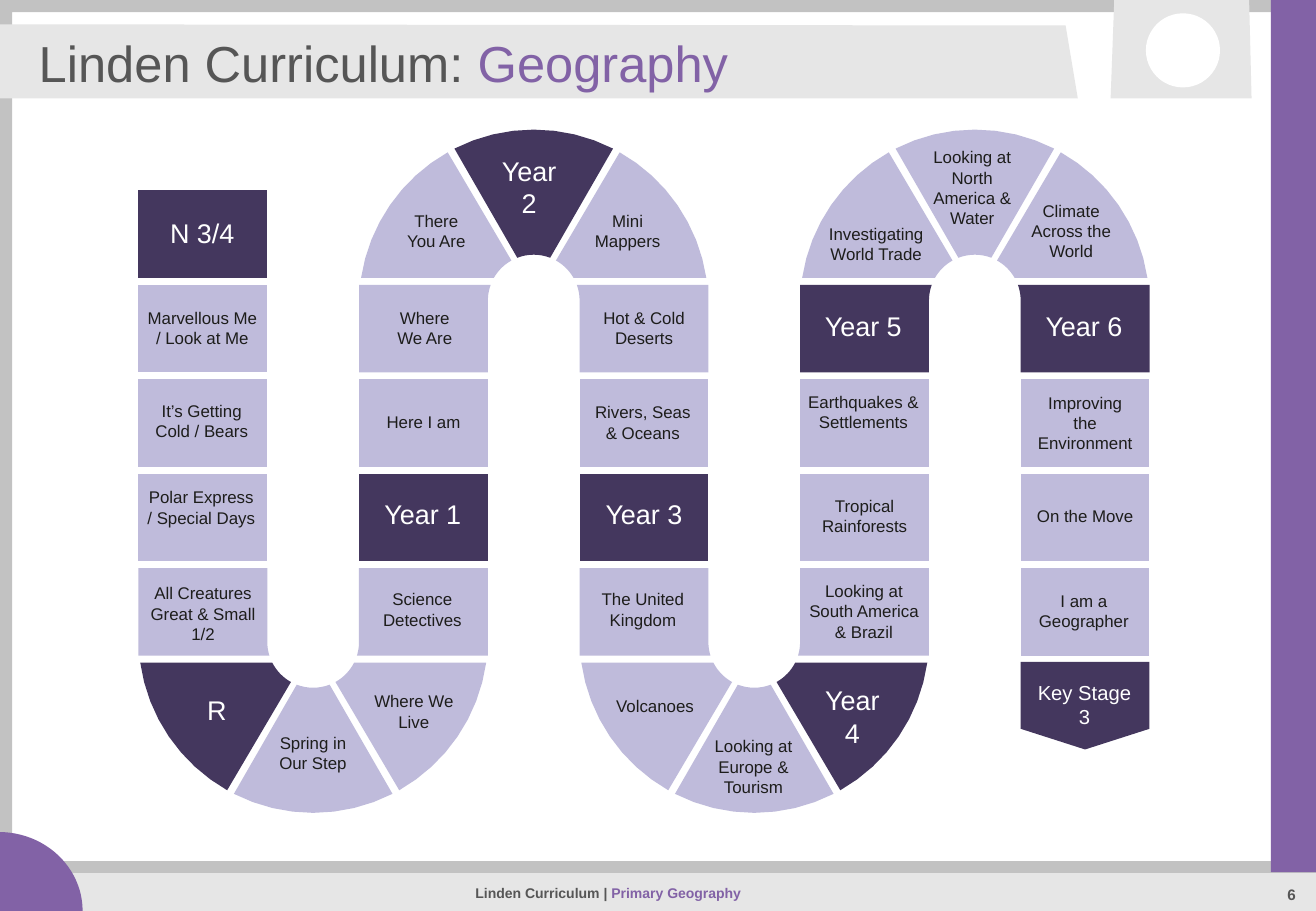
from math import asin, cos, degrees, radians, sin

from lxml import etree
from pptx import Presentation
from pptx.dml.color import RGBColor
from pptx.enum.shapes import MSO_CONNECTOR, MSO_SHAPE
from pptx.enum.text import MSO_ANCHOR, PP_ALIGN
from pptx.oxml.ns import qn
from pptx.util import Emu, Pt

RECT, OVAL, ARC, FRAME = MSO_SHAPE.RECTANGLE, MSO_SHAPE.OVAL, MSO_SHAPE.ARC, MSO_SHAPE.FRAME
LEFT, CENTER = PP_ALIGN.LEFT, PP_ALIGN.CENTER
TOP, MIDDLE = MSO_ANCHOR.TOP, MSO_ANCHOR.MIDDLE

SCALE = 9144  # EMU per px, 100 px to the inch
W, H = 1083, 750
FONT = "Arial"
COLORS = {"grey": "C2C2C2", "pale": "E6E6E6", "purple": "8262A6", "white": "FFFFFF",
          "text": "565656", "ink": "1D1D1B", "unit": "BFBBDB", "stage": "44375E"}

# Content: (paragraphs, kind, text area as left, top, width)
COLUMNS = [
    [(["N 3/4"], "stage", (135, 178, 63)),
     (["Marvellous Me", "/ Look at Me"], "unit", (117, 253, 99)),
     (["It’s Getting Cold / Bears"], "unit", (125, 330, 82)),
     (["Polar Express / Special Days"], "unit", (121, 401, 89)),
     (["All Creatures Great & Small", "1/2"], "unit", (118, 480, 98))],
    [(["Where We Are"], "unit", (325, 253, 49)),
     (["Here I am"], "unit", (313, 339, 71)),
     (["Year 1"], "stage", (307, 410, 82)),
     (["Science Detectives"], "unit", (313, 485, 69))],
    [(["Hot & Cold Deserts"], "unit", (491, 253, 78)),
     (["Rivers, Seas & Oceans"], "unit", (488, 331, 82)),
     (["Year 3"], "stage", (486, 410, 88)),
     (["The United Kingdom"], "unit", (491, 485, 76))],
    [(["Year 5"], "stage", (673, 255, 75)),
     (["Earthquakes & Settlements"], "unit", (663, 322, 95)),
     (["Tropical Rainforests"], "unit", (672, 408, 79)),
     (["Looking at South America & Brazil"], "unit", (661, 478, 100))],
    [(["Year 6"], "stage", (848, 255, 88)),
     (["Improving the Environment"], "unit", (852, 323, 82)),
     (["On the Move"], "unit", (850, 416, 86)),
     (["I am a Geographer"], "unit", (850, 486, 84))],
]
# Bend i joins columns i and i + 1: bottom, top, bottom, top
BENDS = [
    [(["R"], "stage", (158, 571, 41)),
     (["Spring in Our Step"], "unit", (225, 603, 65)),
     (["Where We Live"], "unit", (307, 569, 67))],
    [(["There You Are"], "unit", (328, 173, 62)),
     (["Year 2"], "stage", (404, 127, 63)),
     (["Mini Mappers"], "unit", (485, 173, 63))],
    [(["Volcanoes"], "unit", (502, 573, 74)),
     (["Looking at Europe & Tourism"], "unit", (587, 606, 66)),
     (["Year", "4"], "stage", (670, 563, 63))],
    [(["Investigating World Trade"], "unit", (676, 184, 90)),
     (["Looking at North America & Water"], "unit", (764, 121, 72)),
     (["Climate Across the World"], "unit", (847, 165, 69))],
]

# Road geometry
COL_X, COL_PITCH, BLOCK_W = 114, 181.5, 106
ROW_Y, ROW_PITCH, BLOCK_H = 156.75, 77.75, 72
GAP = ROW_PITCH - BLOCK_H
R_OUT, R_IN = (COL_PITCH + BLOCK_W) / 2, (COL_PITCH - BLOCK_W) / 2
CENTRES = {-1: (250.5, 247.5), 1: (525.5, 528.5)}  # outer and inner arc centre y, by direction

prs = Presentation()
prs.slide_width, prs.slide_height = Emu(W * SCALE), Emu(H * SCALE)
s = prs.slides.add_slide(prs.slide_layouts[6])


def px(v):
    return Emu(round(v * SCALE))


def rgb(name):
    return RGBColor.from_string(COLORS[name])


def paint(sp, color):
    sp.shadow.inherit = False
    sp.fill.solid()
    sp.fill.fore_color.rgb = rgb(color)
    sp.line.fill.background()
    return sp


def shape(kind, x, y, w, h, color):
    return paint(s.shapes.add_shape(kind, px(x), px(y), px(w), px(h)), color)


def polygon(points, color):
    pts = [(px(x), px(y)) for x, y in points]
    fb = s.shapes.build_freeform(*pts[0], scale=1.0)
    fb.add_line_segments(pts[1:], close=True)
    return paint(fb.convert_to_shape(), color)


def text(sp, paragraphs, size=10, bold=False, align=CENTER, anchor=TOP, spacing=None):
    """Each paragraph is a list of (words, colour) runs."""
    tf = sp.text_frame
    tf.word_wrap = True
    tf.vertical_anchor = anchor
    for i, runs in enumerate(paragraphs):
        p = tf.add_paragraph() if i else tf.paragraphs[0]
        p.alignment = align
        if spacing:
            p.line_spacing = spacing
        for words, color in runs:
            r = p.add_run()
            r.text = words
            r.font.name, r.font.size, r.font.bold = FONT, Pt(size), bold
            r.font.color.rgb = rgb(color)


def textbox(x, y, w, h):
    return s.shapes.add_textbox(px(x), px(y), px(w), px(h))


def piece(points, words, kind, area, size=None):
    """One piece of the road, its label set into the text area by insets."""
    sp = polygon(points, kind)
    x, y, w = map(px, area)
    tf = sp.text_frame
    tf.margin_left, tf.margin_right = x - sp.left, sp.left + sp.width - x - w
    tf.margin_top, tf.margin_bottom = y - sp.top, 0
    color, default = ("white", 16) if kind == "stage" else ("ink", 10)
    text(sp, [[(line, color)] for line in words], size=size or default)


def arc(cx, cy, radius, start, end, way, steps=8):
    """Points on a bend: 0 degrees is its left side, 180 its right."""
    angles = [radians(start + (end - start) * i / steps) for i in range(steps + 1)]
    return [(cx - radius * cos(a), cy + way * radius * sin(a)) for a in angles]


def bend_way(i):
    return -1 if i % 2 else 1


def bend_x(i):
    return COL_X + COL_PITCH * i + R_OUT


def rise(y, cy, radius):
    return degrees(asin(abs(y - cy) / radius))


def block(col, row):
    """A rectangle, its inner corner rounded where it meets a bend."""
    x, y = COL_X + COL_PITCH * col, ROW_Y + ROW_PITCH * row
    for i in (col - 1, col):
        way = bend_way(i)
        if 0 <= i < len(BENDS) and row == (4 if way > 0 else 1):
            far, near = (y + BLOCK_H, y) if way > 0 else (y, y + BLOCK_H)
            cy = CENTRES[way][1]
            a = rise(far, cy, R_IN)
            start, end, inner, outer = (0, a, x + BLOCK_W, x) if i == col else (180, 180 - a, x, x + BLOCK_W)
            return [(outer, near), (inner, near), *arc(bend_x(i), cy, R_IN, start, end, way), (outer, far)]
    return [(x, y), (x + BLOCK_W, y), (x + BLOCK_W, y + BLOCK_H), (x, y + BLOCK_H)]


def wedges(i):
    way, cx = bend_way(i), bend_x(i)
    cy_out, cy_in = CENTRES[way]
    edge = ROW_Y + ROW_PITCH * 5 if way > 0 else ROW_Y + ROW_PITCH - GAP
    o, n = rise(edge, cy_out, R_OUT), rise(edge, cy_in, R_IN)
    spans = [(o, 60.5, n, 61), (63, 117, 69, 111), (119.5, 180 - o, 119, 180 - n)]
    return [arc(cx, cy_out, R_OUT, a, b, way) + arc(cx, cy_in, R_IN, d, c, way)
            for a, b, c, d in spans]


# Frame, footer and header
shape(FRAME, 0, 0, W, H, "grey").adjustments[0] = 10 / H
shape(RECT, 32, 718, W - 32, H - 718, "pale")
ln = s.shapes.add_connector(MSO_CONNECTOR.STRAIGHT, px(5), px(714), px(W), px(714))
ln.line.color.rgb, ln.line.width = rgb("grey"), Pt(7)
etree.SubElement(ln._element.spPr, qn("a:effectLst"))
shape(ARC, -70, 685, 138, 130, "purple")
polygon([(914, 81), (1030, 81), (1028, 0), (917, 0)], "pale")
shape(OVAL, 943, 11, 61, 61, "white")
polygon([(0, 20), (877, 21), (887, 81), (0, 81)], "pale")
shape(RECT, 1046, 0, W - 1046, 718, "purple")
text(textbox(205, 721, 591, 30), [[("Linden Curriculum | ", "text"), ("Primary Geography", "purple")]],
     size=8.3, bold=True, anchor=MIDDLE, spacing=0.9)
text(textbox(1031, 721, 64, 28), [[("6", "text")]], size=9, bold=True, spacing=1.2)
text(textbox(22, 26, 842, 50), [[("Linden Curriculum: ", "text"), ("Geography", "purple")]],
     size=30, align=LEFT, anchor=MIDDLE)

# Road of units: straight columns, then bends
for col, cells in enumerate(COLUMNS):
    for row, cell in enumerate(cells, start=5 - len(cells)):
        piece(block(col, row), *cell)
for i, cells in enumerate(BENDS):
    for points, cell in zip(wedges(i), cells):
        piece(points, *cell)

# Arrow to the next stage
piece([(840, 545), (946, 545), (946, 600), (893, 617), (840, 600)],
      ["Key Stage 3"], "stage", (851, 560, 83), size=12)

prs.save("out.pptx")
